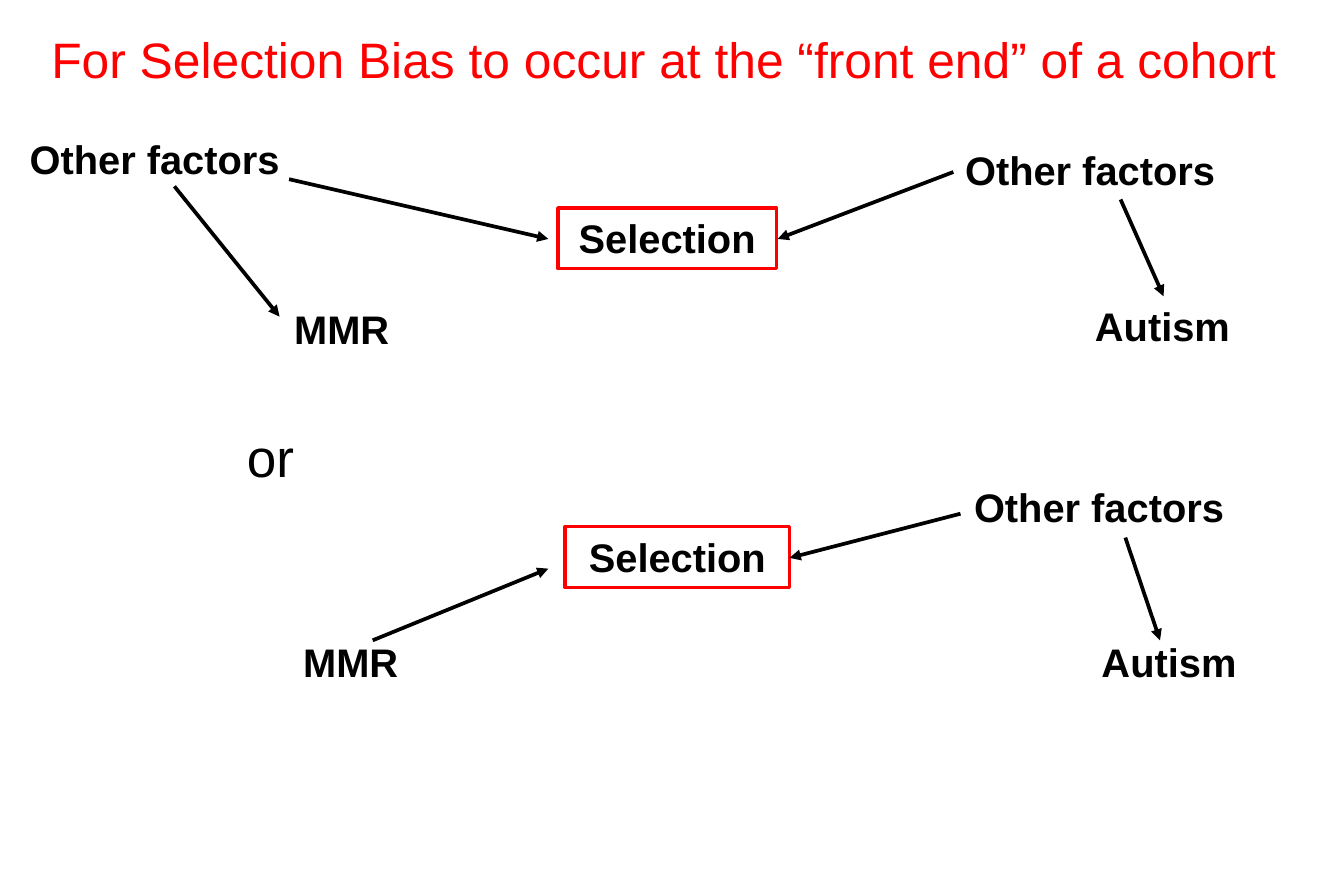
from dataclasses import dataclass

from lxml import etree
from pptx import Presentation
from pptx import util as u
from pptx.dml.color import RGBColor
from pptx.enum import shapes, text
from pptx.oxml import ns

EMU_PER_PX = 9144


def px(*lengths):
    return [u.Emu(n * EMU_PER_PX) for n in lengths]


@dataclass(frozen=True)
class Theme:
    font: str = "Arial"
    ink: RGBColor = RGBColor(0, 0, 0)
    accent: RGBColor = RGBColor(255, 0, 0)
    title_size: int = 30
    label_size: int = 24
    joiner_size: int = 32
    box_line: float = 2
    arrow_line: float = 2.25
    label_height: int = 51


class CausalSlide:
    def __init__(self, prs, theme):
        self.theme = theme
        self.s = prs.slides.add_slide(prs.slide_layouts[5])
        self.target = self.s.shapes

    def start_diagram(self):
        self.target = self.s.shapes.add_group_shape().shapes

    def end_diagram(self):
        self.target = self.s.shapes

    def set_text(self, sp, words, size, color, bold=False):
        tf = sp.text_frame
        tf.word_wrap = True
        tf.auto_size = text.MSO_AUTO_SIZE.NONE
        tf.vertical_anchor = text.MSO_ANCHOR.TOP
        p = tf.paragraphs[0]
        p.alignment = text.PP_ALIGN.CENTER
        r = p.add_run()
        r.text = words
        r.font.name = self.theme.font
        r.font.size = u.Pt(size)
        r.font.bold = bold
        r.font.color.rgb = color

    def title(self, words, x, y, w, h):
        sp = self.s.shapes.title
        sp.left, sp.top, sp.width, sp.height = px(x, y, w, h)
        self.set_text(sp, words, self.theme.title_size, self.theme.accent)

    def joiner(self, words, x, y, w, h):
        sp = self.target.add_textbox(*px(x, y, w, h))
        self.set_text(sp, words, self.theme.joiner_size, self.theme.ink)

    def label(self, words, x, y, w):
        sp = self.target.add_textbox(*px(x, y, w, self.theme.label_height))
        self.set_text(sp, words, self.theme.label_size, self.theme.ink, bold=True)

    def box(self, words, x, y, w):
        sp = self.target.add_shape(
            shapes.MSO_SHAPE.RECTANGLE, *px(x, y, w, self.theme.label_height))
        sp.shadow.inherit = False
        sp.fill.background()
        sp.line.color.rgb = self.theme.accent
        sp.line.width = u.Pt(self.theme.box_line)
        self.set_text(sp, words, self.theme.label_size, self.theme.ink, bold=True)

    def arrow(self, x1, y1, x2, y2):
        sp = self.target.add_connector(
            shapes.MSO_CONNECTOR.STRAIGHT, *px(x1, y1, x2, y2))
        sp.line.color.rgb = self.theme.ink
        sp.line.width = u.Pt(self.theme.arrow_line)
        ln = sp.line.fill._xPr
        etree.SubElement(ln, ns.qn("a:tailEnd"), type="triangle")
        etree.SubElement(ln.getparent(), ns.qn("a:effectLst"))

    def diagram(self, selection, labels, arrows):
        self.start_diagram()
        self.box("Selection", *selection)
        for label in labels:
            self.label(*label)
        for arrow in arrows:
            self.arrow(*arrow)
        self.end_diagram()


def main():
    prs = Presentation()
    prs.slide_width, prs.slide_height = px(1125, 750)
    slide = CausalSlide(prs, Theme())

    slide.title("For Selection Bias to occur at the “front end” of a cohort",
                -8, 19, 1128, 61)
    slide.diagram(
        selection=(467, 174, 183),
        labels=[
            ("Other factors", 13, 108, 233),
            ("Other factors", 796, 117, 233),
            ("MMR", 159, 250, 254),
            ("Autism", 854, 248, 238),
        ],
        arrows=[
            (242, 150, 459, 200),
            (798, 144, 651, 200),
            (146, 156, 234, 265),
            (938, 167, 974, 248),
        ],
    )
    slide.joiner("or", 190, 350, 73, 64)
    slide.diagram(
        selection=(473, 441, 188),
        labels=[
            ("Other factors", 802, 399, 236),
            ("MMR", 146, 529, 295),
            ("Autism", 871, 529, 215),
        ],
        arrows=[
            (312, 536, 459, 476),
            (804, 430, 661, 467),
            (942, 450, 971, 536),
        ],
    )
    prs.save("out.pptx")


if __name__ == "__main__":
    main()
